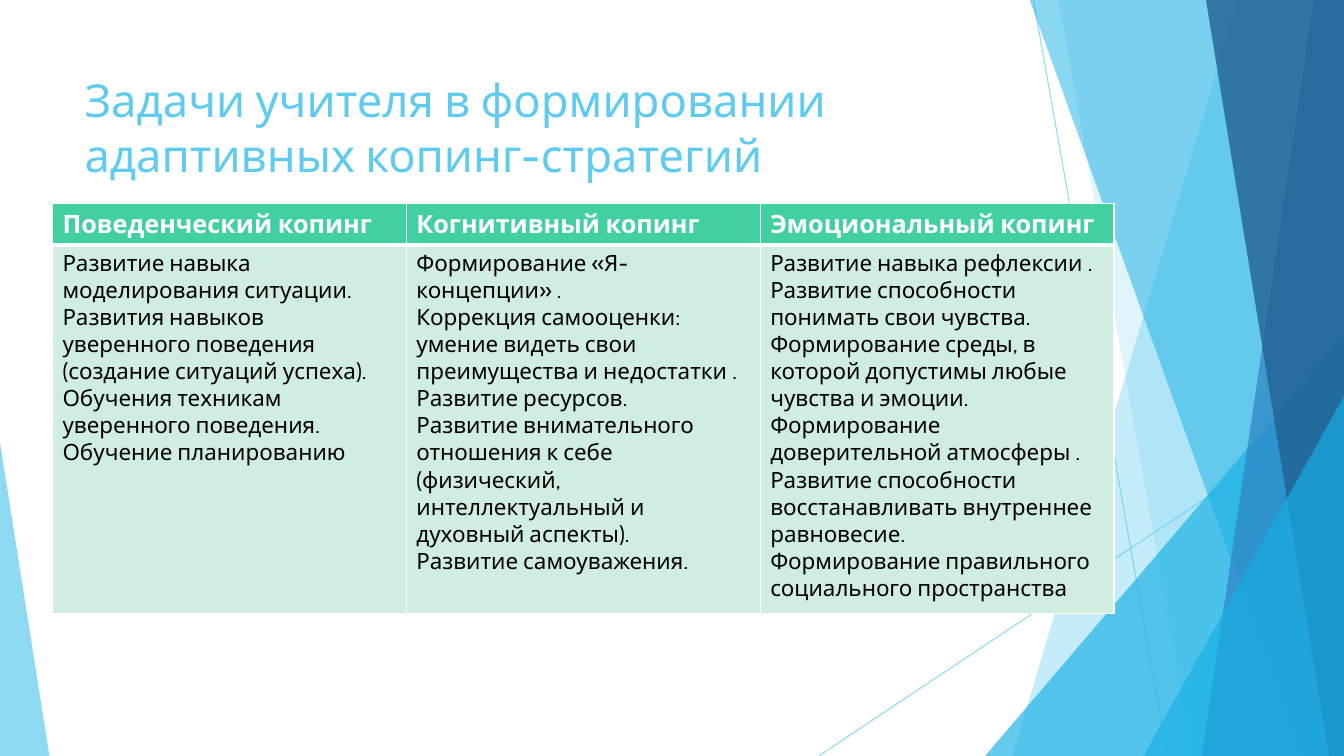
"""Build a slide on coping strategies: a title, a table and translucent bands."""
from lxml.etree import SubElement as Sub
from pptx import Presentation
from pptx.dml.color import RGBColor as Rgb
from pptx.enum.shapes import MSO_CONNECTOR as Link, MSO_SHAPE as Kind
from pptx.enum.text import MSO_ANCHOR as Anchor
from pptx.oxml.ns import qn
from pptx.util import Inches, Pt

THEME = dict(
    font="Cabin", title=32.4, head=18, body=16,
    sky="5FCBEF", cyan="17B0E4", blue="2E83C3", navy="226292",
    green="42D0A2", mint="CFEEE0", white="FFFFFF", black="000000",
)
WIDE, HIGH = 13.33, 7.5
TITLE = "Задачи учителя в формировании адаптивных копинг-стратегий"
TABLE = {
    "Поведенческий копинг": [
        "Развитие навыка моделирования ситуации.",
        "Развития навыков уверенного поведения (создание ситуаций успеха).",
        "Обучения техникам уверенного поведения.",
        "Обучение планированию",
    ],
    "Когнитивный копинг": [
        "Формирование «Я-концепции» .",
        "Коррекция самооценки: умение видеть свои преимущества и недостатки .",
        "Развитие ресурсов.",
        "Развитие внимательного отношения к себе (физический, интеллектуальный и духовный аспекты).",
        "Развитие самоуважения.",
    ],
    "Эмоциональный копинг": [
        "Развитие навыка рефлексии .",
        "Развитие способности понимать свои чувства.",
        "Формирование среды, в которой допустимы любые чувства и эмоции.",
        "Формирование доверительной атмосферы .\nРазвитие способности восстанавливать внутреннее равновесие.",
        "Формирование правильного социального пространства",
    ],
}
RAYS = [(10.25, 0, 11.58, HIGH), (WIDE, 4.03, 8.12, HIGH)]
LAYERS = [
    ("band", (12.28, 10.04), "sky", 36),
    ("band", (10.5, 11.83), "sky", 20),
    ("peak", (9.77, 3.33, 3.56, 1), "cyan", 66),
    ("band", (10.21, 12.91), "cyan", 50),
    ("band", (13.03, 11.92), "blue", 70),
    ("band", (11.96, 13.18), "navy", 80),
    ("peak", (11.34, 3.93, 1.99, 1), "cyan", 66),
    ("peak", (0, 4.39, 0.49, 0), "sky", 70),
]
ROWS = [0.41, 3.66]
COL = 3.51


def tint(fill, name, alpha=100):
    fill.solid()
    fill.fore_color.rgb = Rgb.from_string(THEME[name])
    if alpha < 100:
        node = fill._xPr.find(qn("a:solidFill"))[0]
        Sub(node, qn("a:alpha"), val=str(alpha * 1000))


def write(frame, lines, size, color, bold=False):
    frame.word_wrap = True
    for num, line in enumerate(lines):
        para = frame.add_paragraph() if num else frame.paragraphs[0]
        para.text = line
        for run in para.runs:
            font = run.font
            font.name, font.size, font.bold = THEME["font"], Pt(THEME[size]), bold
            font.color.rgb = Rgb.from_string(THEME[color])


def ray(shapes, ends):
    line = shapes.add_connector(Link.STRAIGHT, *map(Inches, ends))
    line.line.width = Pt(0.75)
    tint(line.line.fill, "sky", 70)
    Sub(line._element.spPr, qn("a:effectLst"))


def band(shapes, top, base):
    path = shapes.build_freeform(Inches(top), Inches(-0.01))
    ends = [(WIDE, -0.01), (WIDE, HIGH), (base, HIGH)]
    path.add_line_segments([(Inches(x), Inches(y)) for x, y in ends])
    return path.convert_to_shape()


def peak(shapes, left, top, width, tip):
    box = map(Inches, (left, top, width, HIGH - top))
    shape = shapes.add_shape(Kind.ISOSCELES_TRIANGLE, *box)
    shape.adjustments[0] = tip
    return shape


def edge(cell, row):
    props = cell._tc.get_or_add_tcPr()
    thick = "T" if row else "B"
    for side in "LRTB":
        width = Pt(3 if side == thick else 1)
        line = Sub(props, qn(f"a:ln{side}"), w=str(width))
        Sub(Sub(line, qn("a:solidFill")), qn("a:srgbClr"), val=THEME["white"])


def grid(shapes):
    box = map(Inches, (0.52, 2.02, COL * len(TABLE), sum(ROWS)))
    table = shapes.add_table(len(ROWS), len(TABLE), *box).table
    for row, high in zip(table.rows, ROWS):
        row.height = Inches(high)
    for col, (head, tasks) in enumerate(TABLE.items()):
        table.columns[col].width = Inches(COL)
        parts = [([head], "head", "white", True, "green"),
                 (tasks, "body", "black", False, "mint")]
        for row, (lines, size, color, bold, back) in enumerate(parts):
            cell = table.cell(row, col)
            edge(cell, row)
            tint(cell.fill, back)
            write(cell.text_frame, lines, size, color, bold=bold)


def main():
    deck = Presentation()
    deck.slide_width, deck.slide_height = Inches(WIDE), Inches(HIGH)
    shapes = deck.slides.add_slide(deck.slide_layouts[6]).shapes
    for ends in RAYS:
        ray(shapes, ends)
    draw = dict(band=band, peak=peak)
    for kind, place, color, alpha in LAYERS:
        shape = draw[kind](shapes, *place)
        shape.shadow.inherit = False
        shape.line.fill.background()
        tint(shape.fill, color, alpha)
    box = shapes.add_textbox(*map(Inches, (0.74, 0.67, 9.93, 0.8)))
    box.text_frame.vertical_anchor = Anchor.TOP
    write(box.text_frame, [TITLE], "title", "sky")
    grid(shapes)
    deck.save("out.pptx")


if __name__ == "__main__":
    main()
